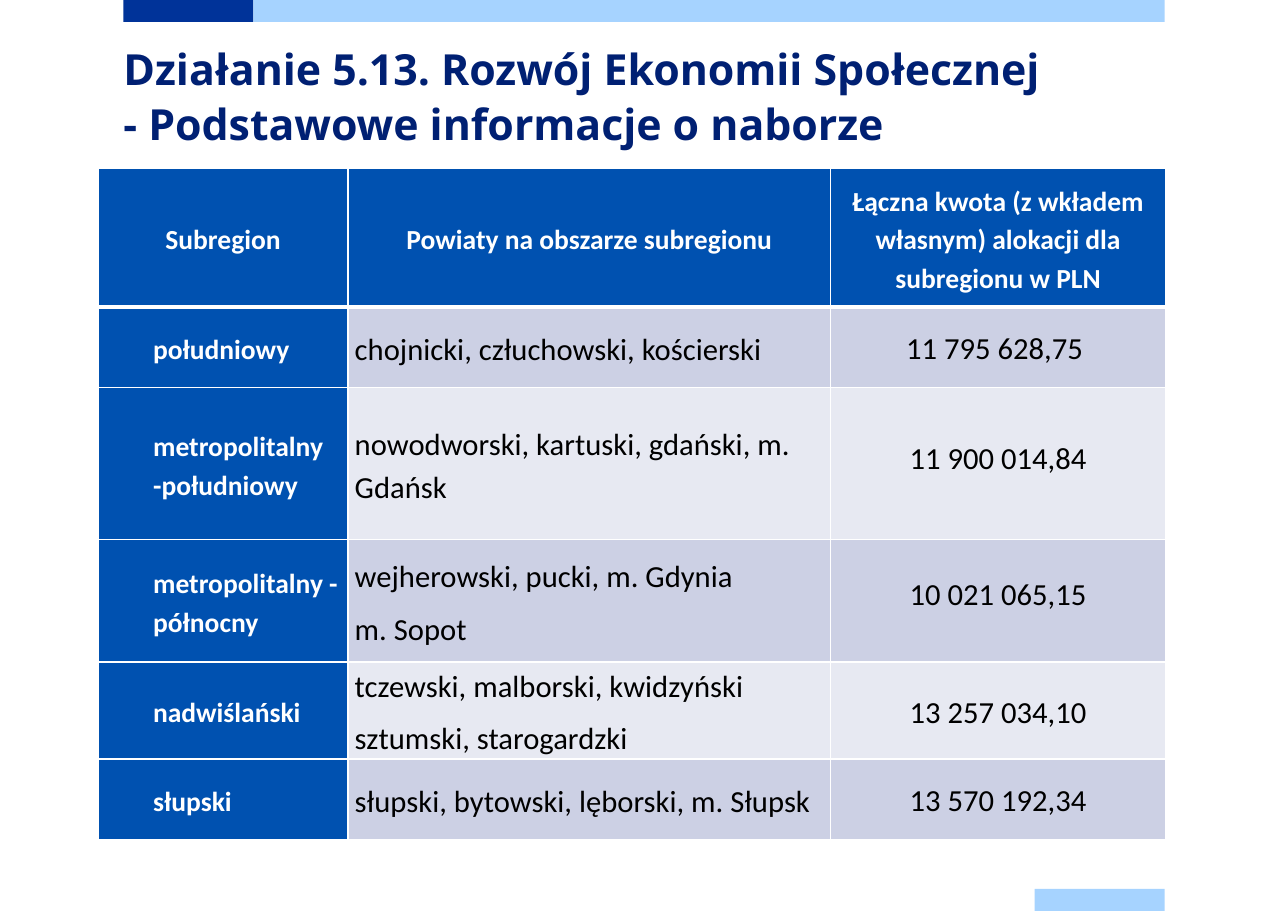
from lxml.etree import SubElement
from pptx import Presentation
from pptx.dml.color import RGBColor
from pptx.enum.shapes import MSO_SHAPE
from pptx.enum.text import MSO_ANCHOR, PP_ALIGN
from pptx.oxml.ns import qn
from pptx.util import Inches, Pt

COLORS = {
    "navy": "003399", "sky": "A6D3FF", "title": "002073", "blue": "0051B0",
    "lavender": "CCD0E4", "pale": "E7E9F2", "white": "FFFFFF", "black": "000000",
}
BARS = [
    (1.12, 0, 1.18, "navy"),
    (2.3, 0, 8.27, "sky"),
    (9.39, 8.07, 1.18, "sky"),
]
TITLE = "Działanie 5.13. Rozwój Ekonomii Społecznej\n- Podstawowe informacje o naborze"
HEADERS = [
    "Subregion",
    "Powiaty na obszarze subregionu",
    "Łączna kwota (z wkładem własnym) alokacji dla subregionu w PLN",
]
SUBREGIONS = [
    ("południowy", ["chojnicki, człuchowski, kościerski"], "11 795 628,75 ", 0.73, 0.16),
    ("metropolitalny -południowy", ["nowodworski, kartuski, gdański, m. Gdańsk"],
     "11 900 014,84", 1.38, 0.43),
    ("metropolitalny - północny", ["wejherowski, pucki, m. Gdynia", "m. Sopot"],
     "10 021 065,15", 1.11, 0.28),
    ("nadwiślański", ["tczewski, malborski, kwidzyński", "sztumski, starogardzki"],
     "13 257 034,10", 0.88, 0.24),
    ("słupski", ["słupski, bytowski, lęborski, m. Słupsk"], "13 570 192,34", 0.73, 0.16),
]
COLUMN_WIDTHS = [2.27, 4.38, 3.04]
HEADER_HEIGHT = 1.26


class SlideBuilder:
    """Draws styled elements on the current slide."""

    def __init__(self, page):
        self.page = page

    def color(self, name):
        return RGBColor.from_string(COLORS[name])

    def style(self, paragraph, size, color, bold=False, font="Calibri"):
        paragraph.font.name = font
        paragraph.font.size = Pt(size)
        paragraph.font.bold = bold
        paragraph.font.color.rgb = self.color(color)

    def bar(self, left, top, width, color):
        bar = self.page.shapes.add_shape(
            MSO_SHAPE.RECTANGLE, Inches(left), Inches(top), Inches(width), Inches(0.2))
        bar.shadow.inherit = False
        bar.fill.solid()
        bar.fill.fore_color.rgb = self.color(color)
        bar.line.fill.background()

    def title(self, text):
        box = self.page.shapes.add_textbox(
            Inches(1.12), Inches(0.35), Inches(9.65), Inches(1.18))
        frame = box.text_frame
        frame.word_wrap = True
        frame.margin_left = frame.margin_right = 0
        frame.margin_top = frame.margin_bottom = 0
        paragraph = frame.paragraphs[0]
        paragraph.text = text
        paragraph.line_spacing = Pt(36)
        self.style(paragraph, 28, "title", True, "Open Sans")

    def table(self, row_heights):
        table = self.page.shapes.add_table(
            len(row_heights), len(COLUMN_WIDTHS), Inches(0.89), Inches(1.53),
            Inches(sum(COLUMN_WIDTHS)), Inches(sum(row_heights))).table
        table.first_row = table.horz_banding = False
        for column, width in zip(table.columns, COLUMN_WIDTHS):
            column.width = Inches(width)
        for row, height in zip(table.rows, row_heights):
            row.height = Inches(height)
        return table

    def borders(self, cell, top, bottom):
        properties = cell._tc.get_or_add_tcPr()
        for side, width in (("L", 1), ("R", 1), ("T", top), ("B", bottom)):
            line = SubElement(properties, qn(f"a:ln{side}"), w=str(Pt(width)))
            fill = SubElement(line, qn("a:solidFill"))
            SubElement(fill, qn("a:srgbClr"), val=COLORS["white"])

    def cell(self, cell, lines, fill, size, color, bold=False, align=PP_ALIGN.LEFT,
             left=0.06, top=0, indent=0, after=0, anchor=MSO_ANCHOR.MIDDLE, edges=(1, 1)):
        self.borders(cell, *edges)
        cell.fill.solid()
        cell.fill.fore_color.rgb = self.color(fill)
        cell.vertical_anchor = anchor
        cell.margin_left, cell.margin_right = Inches(left), Inches(0.06)
        cell.margin_top, cell.margin_bottom = Inches(top), 0
        frame = cell.text_frame
        frame.text = "\n".join(lines)
        for index, paragraph in enumerate(frame.paragraphs):
            paragraph.alignment = align
            paragraph.line_spacing = 1.15
            paragraph.space_before = Pt(6 if index else 0)
            paragraph.space_after = Pt(after)
            if indent:
                paragraph._p.get_or_add_pPr().set("marL", str(Inches(indent)))
            self.style(paragraph, size, color, bold)


def main():
    deck = Presentation()
    deck.slide_width, deck.slide_height = Inches(11.69), Inches(8.27)
    builder = SlideBuilder(deck.slides.add_slide(deck.slide_layouts[6]))
    for bar in BARS:
        builder.bar(*bar)
    builder.title(TITLE)

    table = builder.table([HEADER_HEIGHT] + [height for *_, height, _ in SUBREGIONS])
    for column, header in enumerate(HEADERS):
        builder.cell(table.cell(0, column), [header], "blue", 18, "white", True,
                     PP_ALIGN.CENTER, after=6, edges=(1, 3))
    for row, (name, counties, amount, _, top) in enumerate(SUBREGIONS, 1):
        fill = "lavender" if row % 2 else "pale"
        edges = (3 if row == 1 else 1, 1)
        builder.cell(table.cell(row, 0), [name], "blue", 18, "white", True,
                     left=0, indent=0.5, edges=edges)
        builder.cell(table.cell(row, 1), counties, fill, 20, "black", edges=edges)
        builder.cell(table.cell(row, 2), [amount], fill, 20, "black",
                     align=PP_ALIGN.CENTER, top=top, anchor=MSO_ANCHOR.TOP, edges=edges)
    deck.save("out.pptx")


if __name__ == "__main__":
    main()
